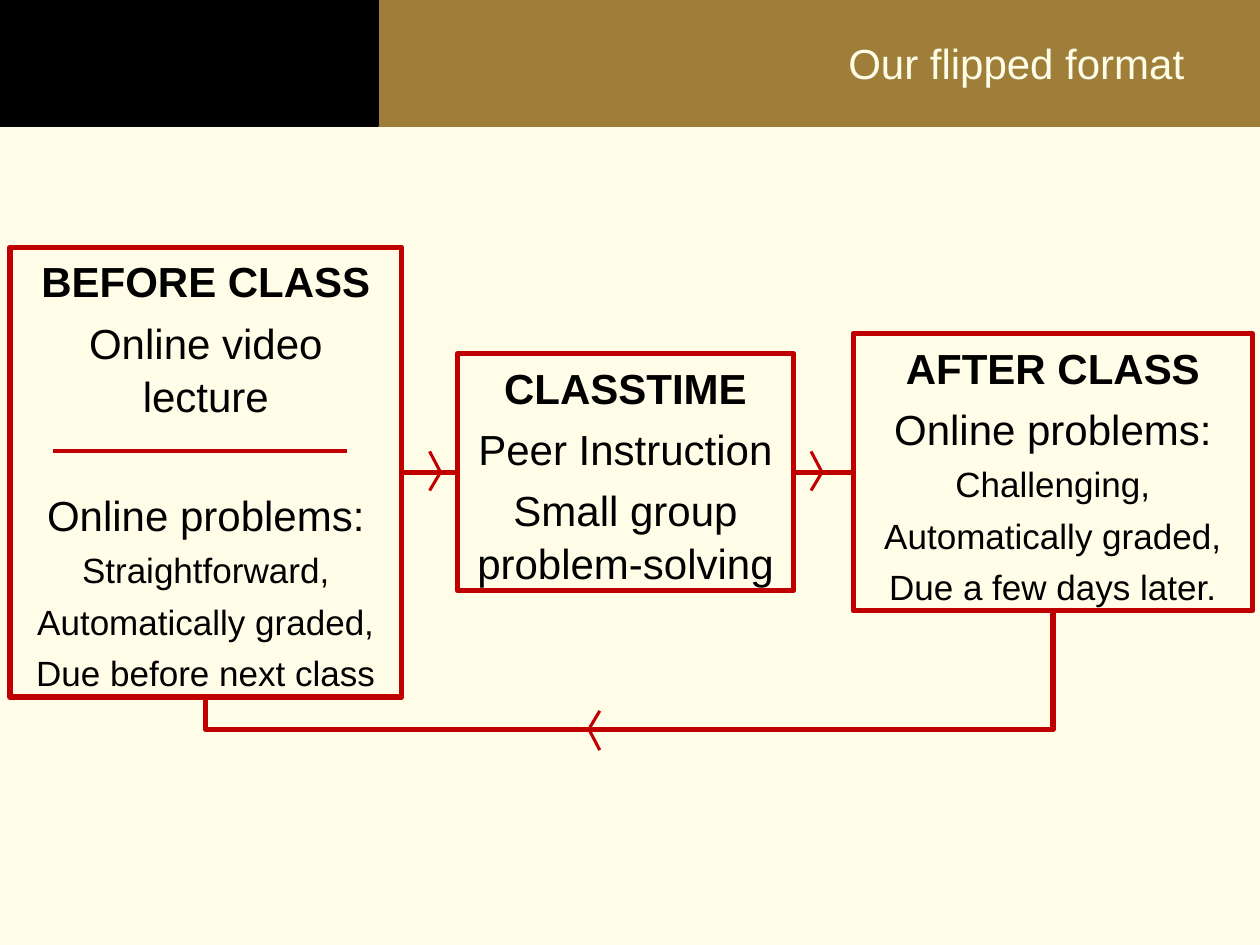
"""Build the slide that shows the cycle of a flipped class."""
from lxml.etree import SubElement
from pptx import Presentation
from pptx.dml.color import RGBColor
from pptx.enum.shapes import MSO_CONNECTOR as Link, MSO_SHAPE as Preset
from pptx.enum.text import MSO_ANCHOR as Anchor, PP_ALIGN as Align
from pptx.oxml.ns import qn
from pptx.util import Cm, Pt

CREAM, GOLD, BLACK, RED = "FFFDE8", "9E7E38", "000000", "C00000"
TITLE = "Our flipped format"
BARS = [(25.4, GOLD), (7.62, BLACK)]
BAR_HEIGHT = 2.54
MIDDLE = 9.52
HEAD, BODY, DETAIL = (24, True), (24, False), (20, False)
LINE_SPACING, SECTION_GAP = 1.05, 38
STAGES = [
    (0.2, 7.9, 9.07, [
        ("BEFORE CLASS", HEAD), ("Online video lecture", BODY),
        ("Online problems:", BODY, SECTION_GAP), ("Straightforward,", DETAIL),
        ("Automatically graded,", DETAIL), ("Due before next class", DETAIL)]),
    (9.22, 6.78, 4.78, [
        ("CLASSTIME", HEAD), ("Peer Instruction", BODY),
        ("Small group problem-solving", BODY)]),
    (17.2, 8.05, 5.59, [
        ("AFTER CLASS", HEAD), ("Online problems:", BODY),
        ("Challenging,", DETAIL), ("Automatically graded,", DETAIL),
        ("Due a few days later.", DETAIL)]),
]
DIVIDER = (1.07, 9.1, 6.99, 9.1)
RETURN_DROP, RETURN_RISE = 2.39, 0.64
CHEVRONS = [(8.88, MIDDLE, 1), (16.57, MIDDLE, 1), (11.87, 14.7, -1)]
CHEVRON_ARMS = [(-0.22, -0.42), (-0.22, 0.37)]


def color(value):
    return RGBColor.from_string(value)


def add_box(slide, left, top, width, height, fill, line, weight):
    shape = slide.shapes.add_shape(
        Preset.RECTANGLE, Cm(left), Cm(top), Cm(width), Cm(height))
    shape.shadow.inherit = False
    if fill:
        shape.fill.solid()
        shape.fill.fore_color.rgb = color(fill)
    else:
        shape.fill.background()
    shape.line.color.rgb = color(line)
    shape.line.width = Pt(weight)
    return shape


def add_line(slide, points, weight, kind=Link.STRAIGHT):
    connector = slide.shapes.add_connector(kind, *(Cm(value) for value in points))
    connector.line.color.rgb = color(RED)
    connector.line.width = Pt(weight)
    SubElement(connector.element.spPr, qn("a:effectLst"))
    return connector


def add_return(slide, start_x, start_y, end_x, end_y):
    drop, span = end_y - start_y, start_x - end_x
    center_x, center_y = (start_x + end_x) / 2, (start_y + end_y) / 2
    left, top = center_x - drop / 2, center_y - span / 2
    connector = add_line(slide, (left, top, left + drop, top + span), 3, Link.ELBOW)
    properties = connector.element.spPr
    properties.find(qn("a:xfrm")).set("rot", "5400000")
    adjustments = properties.find(qn("a:prstGeom")).find(qn("a:avLst"))
    bend = round(RETURN_DROP / drop * 100000)
    SubElement(adjustments, qn("a:gd"), name="adj1", fmla=f"val {bend}")


def add_stage(slide, left, width, height, lines):
    shape = add_box(slide, left, MIDDLE - height / 2, width, height, None, RED, 3)
    frame = shape.text_frame
    frame.word_wrap = True
    frame.vertical_anchor = Anchor.TOP
    for index, (text, (size, bold), *gap) in enumerate(lines):
        paragraph = frame.add_paragraph() if index else frame.paragraphs[0]
        paragraph.text = text
        paragraph.alignment = Align.CENTER
        paragraph.line_spacing = LINE_SPACING
        if index:
            paragraph.space_before = Pt(gap[0] if gap else size * 0.2)
        font = paragraph.runs[0].font
        font.name, font.size, font.bold = "Arial", Pt(size), bold
        font.color.rgb = color(BLACK)


def add_title(slide):
    title = slide.shapes.title
    slide.shapes.element.append(title.element)
    title.left, title.top, title.width, title.height = (
        Cm(8.89), Cm(0), Cm(15.24), Cm(BAR_HEIGHT))
    frame = title.text_frame
    frame.text = TITLE
    frame.vertical_anchor = Anchor.MIDDLE
    paragraph = frame.paragraphs[0]
    paragraph.alignment = Align.RIGHT
    font = paragraph.runs[0].font
    font.name, font.size = "Arial", Pt(24)
    font.color.rgb = color(CREAM)


def main():
    presentation = Presentation()
    presentation.slide_width, presentation.slide_height = Cm(25.4), Cm(19.05)
    slide = presentation.slides.add_slide(presentation.slide_layouts[5])
    slide.background.fill.solid()
    slide.background.fill.fore_color.rgb = color(CREAM)
    for width, fill in BARS:
        add_box(slide, 0, 0, width, BAR_HEIGHT, fill, fill, 0.75)
    add_title(slide)
    for stage in STAGES:
        add_stage(slide, *stage)
    add_line(slide, DIVIDER, 2.25)
    for (left, width, *_), (next_left, *_) in zip(STAGES, STAGES[1:]):
        add_line(slide, (left + width, MIDDLE, next_left, MIDDLE), 3)
    (first_left, first_width, first_height, _), *_, (left, width, height, _) = STAGES
    add_return(slide, left + width / 2, MIDDLE + height / 2,
               first_left + first_width / 2, MIDDLE + first_height / 2)
    for x, y, direction in CHEVRONS:
        for dx, dy in CHEVRON_ARMS:
            add_line(slide, (x + dx * direction, y + dy * direction, x, y), 1.75)
    presentation.save("out.pptx")


if __name__ == "__main__":
    main()
